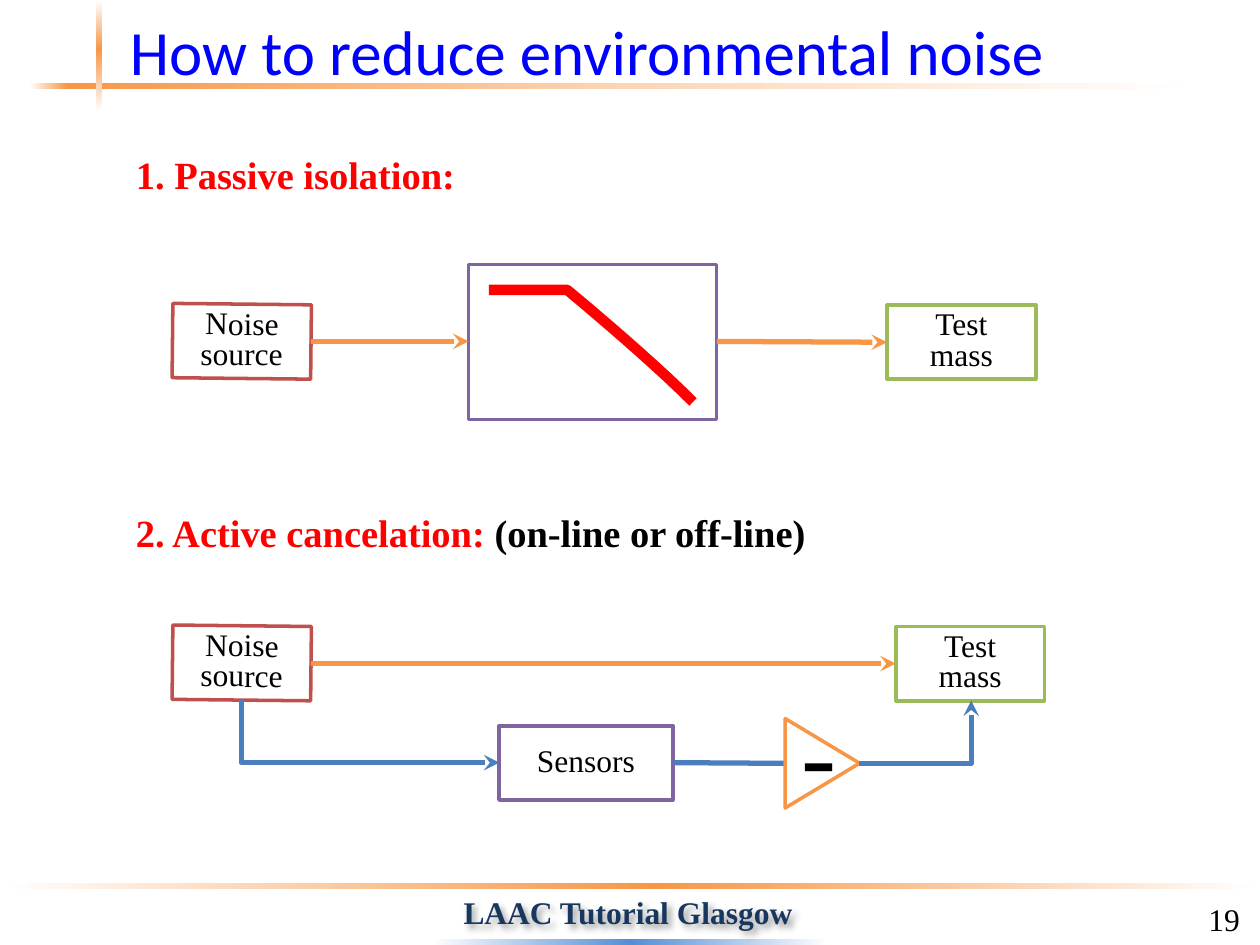
from lxml import etree
from pptx import Presentation
from pptx.dml.color import RGBColor
from pptx.enum.shapes import MSO_CONNECTOR, MSO_SHAPE
from pptx.enum.text import MSO_ANCHOR, PP_ALIGN
from pptx.oxml.ns import qn
from pptx.util import Pt

RECTANGLE, TRIANGLE = MSO_SHAPE.RECTANGLE, MSO_SHAPE.ISOSCELES_TRIANGLE
STRAIGHT, ELBOW = MSO_CONNECTOR.STRAIGHT, MSO_CONNECTOR.ELBOW
LEFT, CENTER = PP_ALIGN.LEFT, PP_ALIGN.CENTER
MIDDLE = MSO_ANCHOR.MIDDLE

WHITE = RGBColor(0xFF, 0xFF, 0xFF)
BLACK = RGBColor(0, 0, 0)
RED = RGBColor(0xFF, 0, 0)
TITLE_BLUE = RGBColor(0, 0, 0xFF)
NAVY = RGBColor(0x17, 0x37, 0x5E)
BRICK = RGBColor(0xC0, 0x50, 0x4D)
PURPLE = RGBColor(0x80, 0x64, 0xA2)
GREEN = RGBColor(0x9B, 0xBB, 0x59)
ORANGE = RGBColor(0xF7, 0x96, 0x46)
PEACH = RGBColor(0xFC, 0xD5, 0xB5)
SIGNAL_BLUE = RGBColor(0x4B, 0x7E, 0xBC)
BAR_BLUE = RGBColor(0x55, 0x8E, 0xD5)
SERIF = "Times New Roman"

deck = Presentation()
deck.slide_width, deck.slide_height = Pt(720), Pt(540)
page = deck.slides.add_slide(deck.slide_layouts[5])
shapes = page.shapes


def style_text(frame, size, colors, bold=False, align=CENTER, spacing=None):
    """Format each paragraph; colors are given run by run."""
    for para in frame.paragraphs:
        para.alignment = align
        para.line_spacing = spacing
        for span, color in zip(para.runs, colors):
            span.font.name, span.font.size = SERIF, Pt(size)
            span.font.bold = bold
            span.font.color.rgb = color


def add_link(kind, start, end, color, arrow=True):
    """Draw a 3 pt connector, with a stealth head at its end if wanted."""
    link = shapes.add_connector(kind, *(Pt(v) for v in start + end))
    link.line.color.rgb, link.line.width = color, Pt(3)
    if arrow:
        etree.SubElement(link.line._get_or_add_ln(), qn("a:tailEnd"), type="stealth")
    properties = link._element.spPr
    etree.SubElement(properties, qn("a:effectLst"))
    if kind == ELBOW:
        properties.find(qn("a:prstGeom")).set("prst", "bentConnector2")
    return link


# Gradient bars: place, angle, stops
bars = [
    ((0.7, 504.7, 718.6, 3.6), 0, [(0, WHITE), (52, ORANGE), (100, WHITE)]),
    ((247, 536.4, 226.8, 3.6), 0, [(0, WHITE), (50, BAR_BLUE), (100, WHITE)]),
    ((2.9, 47.5, 708.5, 3.6), 0, [(2, WHITE), (5, ORANGE), (50, PEACH), (96, WHITE)]),
    ((55, 0.4, 3.6, 70.6), 270, [(0, WHITE), (39, ORANGE), (90, WHITE)]),
]
for place, angle, stops in bars:
    bar = shapes.add_shape(RECTANGLE, *(Pt(v) for v in place))
    bar.shadow.inherit = False
    bar.line.fill.background()
    bar.fill.gradient()
    bar.fill.gradient_angle = angle
    stop_list = bar._element.spPr.find(".//" + qn("a:gsLst"))
    for old_stop in list(stop_list):
        stop_list.remove(old_stop)
    for position, color in stops:
        stop = etree.SubElement(stop_list, qn("a:gs"), pos=str(position * 1000))
        etree.SubElement(stop, qn("a:srgbClr"), val=str(color))

# Title
title = shapes.title
title.left, title.top, title.width, title.height = Pt(67), Pt(-5), Pt(620.6), Pt(67.7)
title.text_frame.text = "How to reduce environmental noise"
title.text_frame.vertical_anchor = MIDDLE
style_text(title.text_frame, 36, [TITLE_BLUE], align=LEFT)
title.text_frame.paragraphs[0].runs[0].font.name = "Calibri"

# Boxes: shape, place, rotation, outline, text
boxes = [(RECTANGLE, (267.8, 151.2, 141.8, 88.6), 0, PURPLE, "")]
for top, test_left in ((173.8, 506.9), (357.6, 511.9)):
    boxes.append((RECTANGLE, (98.6, top, 79.2, 42.5), 0.6, BRICK, "Noise\nsource"))
    boxes.append((RECTANGLE, (test_left, top + 0.4, 85, 42.5), 0, GREEN, "Test\nmass"))
boxes.append((RECTANGLE, (285.1, 414.7, 99.4, 42.5), 0, PURPLE, "Sensors"))
boxes.append((TRIANGLE, (444.4, 414.9, 51.1, 42.5), 90, ORANGE, ""))
for kind, place, rotation, color, text in boxes:
    box = shapes.add_shape(kind, *(Pt(v) for v in place))
    box.shadow.inherit = False
    box.rotation = rotation
    box.fill.solid()
    box.fill.fore_color.rgb = WHITE
    box.line.color.rgb, box.line.width = color, Pt(2)
    if text:
        box.text_frame.text = text
        box.text_frame.vertical_anchor = MIDDLE
        style_text(box.text_frame, 18, [BLACK], spacing=0.8)

# Low-pass curve of the isolator: flat, then a gently bent slope
knee, bend, foot = (324, 165.6), (369.4, 203), (396, 229.7)
slope = []
for step in range(13):
    t = step / 12
    weights = ((1 - t) ** 3 + 3 * t * (1 - t) ** 2, 3 * t * t * (1 - t), t ** 3)
    slope.append(tuple(
        Pt(sum(w * point[axis] for w, point in zip(weights, (knee, bend, foot))))
        for axis in (0, 1)))
builder = shapes.build_freeform(Pt(279.4), Pt(165.6))
builder.add_line_segments(slope, close=False)
curve = builder.convert_to_shape()
curve.shadow.inherit = False
curve.fill.background()
curve.line.color.rgb, curve.line.width = RED, Pt(6)

# Signal paths
add_link(STRAIGHT, (177.8, 195.1), (267.8, 195.1), ORANGE)
add_link(STRAIGHT, (409.7, 195.1), (506.9, 195.6), ORANGE)
add_link(STRAIGHT, (177.8, 379.2), (511.9, 379.2), ORANGE)
add_link(STRAIGHT, (384.5, 435.8), (447.8, 436.2), SIGNAL_BLUE, arrow=False)
add_link(ELBOW, (491, 436.2), (555, 400.3), SIGNAL_BLUE)
sensor_path = add_link(ELBOW, (229.5, 344.1), (193.6, 491.7), SIGNAL_BLUE)
sensor_path._element.spPr.find(qn("a:xfrm")).set("rot", str(270 * 60000))

# Labels: place, runs, size, bold, alignment, spacing, wrap
labels = [
    ((70.6, 82.8, 198.7, 33.8), [("1. Passive isolation:", RED)],
     22, True, LEFT, None, False),
    ((70.6, 287.3, 401.8, 33.8),
     [("2. Active cancelation: ", RED), ("(on-line or off-line)", BLACK)],
     22, True, LEFT, None, False),
    ((450.7, 403.2, 26.6, 65.5), [("-", BLACK)], 60, False, CENTER, 0.8, True),
    ((683.3, 510.5, 32.4, 28.8), [("19", BLACK)], 18, False, CENTER, None, False),
    ((257.8, 506.9, 204.5, 28.8), [("LAAC Tutorial Glasgow", NAVY)],
     18, True, LEFT, None, False),
]
for place, pieces, size, bold, align, spacing, wrap in labels:
    label = shapes.add_textbox(*(Pt(v) for v in place))
    label.text_frame.word_wrap = wrap
    for text, color in pieces:
        label.text_frame.paragraphs[0].add_run().text = text
    style_text(label.text_frame, size, [color for text, color in pieces],
               bold, align, spacing)

# Soft shadow under the footer, the last label
effects = etree.SubElement(label._element.spPr, qn("a:effectLst"))
shadow = etree.SubElement(effects, qn("a:outerShdw"), blurRad=str(Pt(4)),
                          dist=str(Pt(3)), dir="2700000")
shade = etree.SubElement(shadow, qn("a:srgbClr"), val=str(BLACK))
etree.SubElement(shade, qn("a:alpha"), val="40000")

deck.save("out.pptx")
